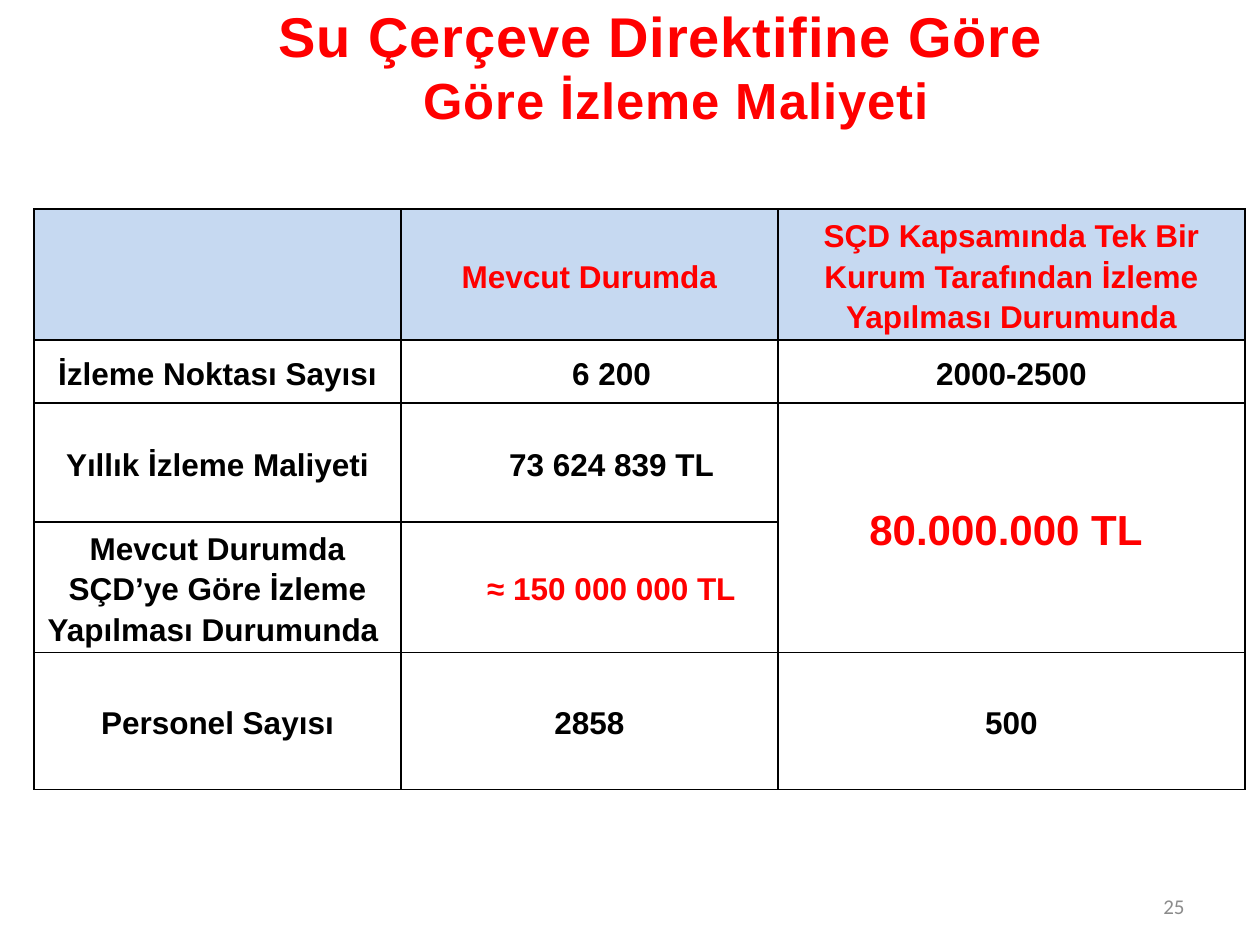
from dataclasses import dataclass
from typing import Any

from lxml import etree
from pptx import Presentation
from pptx import util as u
from pptx.dml.color import RGBColor
from pptx.enum import text
from pptx.oxml import ns

RED, BLACK, WHITE, BLUE, GREY = "FF0000", "000000", "FFFFFF", "C6D9F1", "8C8C8C"
MID = text.PP_ALIGN.CENTER


@dataclass
class Item:
    words: str
    color: str = BLACK
    size: int = 18
    indent: int = 0
    fill: str = WHITE


def px(n: int) -> u.Emu:
    return u.Emu(round(n * 914400 / 126))


def rgb(code: str) -> RGBColor:
    return RGBColor.from_string(code)


def write(para: Any, words: str, *, size: int = 18, color: str = BLACK,
          bold: bool = True, face: str = "Arial", align: Any = MID,
          lines: float = 1.0, indent: int = 0, track: int = 0) -> None:
    para.alignment = align
    para.line_spacing = lines
    if indent:
        props = para._p.get_or_add_pPr()
        props.set("marL", "0")
        props.set("indent", str(px(indent)))
    run = para.add_run()
    run.text = words
    font = run.font
    font.size, font.bold, font.name = u.Pt(size), bold, face
    font.color.rgb = rgb(color)
    if track:
        run._r.get_or_add_rPr().set("spc", str(track))


def add_box(slide: Any, x: int, y: int, w: int, h: int) -> Any:
    frame = slide.shapes.add_textbox(px(x), px(y), px(w), px(h)).text_frame
    frame.word_wrap = True
    frame.vertical_anchor = text.MSO_ANCHOR.MIDDLE
    return frame


def add_edges(cell: Any) -> None:
    props = cell._tc.get_or_add_tcPr()
    for i, side in enumerate(("lnL", "lnR", "lnT", "lnB")):
        line = etree.Element(ns.qn(f"a:{side}"), w=str(u.Pt(1)))
        fill = etree.SubElement(line, ns.qn("a:solidFill"))
        etree.SubElement(fill, ns.qn("a:srgbClr"), val=BLACK)
        props.insert(i, line)


def fill_cell(cell: Any, item: Item) -> None:
    cell.fill.solid()
    cell.fill.fore_color.rgb = rgb(item.fill)
    cell.vertical_anchor = text.MSO_ANCHOR.MIDDLE
    cell.margin_left = cell.margin_right = px(1)
    cell.margin_top = cell.margin_bottom = 0
    add_edges(cell)
    if item.words:
        write(cell.text_frame.paragraphs[0], item.words, size=item.size,
              color=item.color, lines=1.15, indent=item.indent)


def add_grid(slide: Any, x: int, y: int, cols: list[int], rows: list[int],
             items: list[list[Item]]) -> None:
    table = slide.shapes.add_table(len(rows), len(cols), px(x), px(y),
                                   px(sum(cols)), px(sum(rows))).table
    for col, w in zip(table.columns, cols):
        col.width = px(w)
    for row, h in zip(table.rows, rows):
        row.height = px(h)
    for r, line in enumerate(items):
        for c, item in enumerate(line):
            fill_cell(table.cell(r, c), item)
    table.cell(2, 2).merge(table.cell(3, 2))


COLS = [367, 377, 467]
ROWS = [131, 63, 119, 122, 137]
ITEMS = [
    [Item("", fill=BLUE),
     Item("Mevcut Durumda", RED, fill=BLUE),
     Item("SÇD Kapsamında Tek Bir Kurum Tarafından İzleme Yapılması Durumunda",
          RED, fill=BLUE)],
    [Item("İzleme Noktası Sayısı"), Item("6 200", indent=44), Item("2000-2500")],
    [Item("Yıllık İzleme Maliyeti"), Item("73 624 839 TL", indent=44),
     Item("80.000.000 TL ", RED, 24)],
    [Item("Mevcut Durumda SÇD’ye Göre İzleme Yapılması Durumunda "),
     Item("≈ 150 000 000 TL", RED, indent=44), Item("")],
    [Item("Personel Sayısı"), Item("2858"), Item("500")],
]


def main() -> None:
    deck = Presentation()
    deck.slide_width, deck.slide_height = px(1260), px(945)
    slide = deck.slides.add_slide(deck.slide_layouts[6])

    page = add_box(slide, 903, 881, 294, 50)
    write(page.paragraphs[0], "25", size=12, color=GREY, bold=False,
          face="Calibri", align=text.PP_ALIGN.RIGHT)

    add_grid(slide, 34, 209, COLS, ROWS, ITEMS)

    title = add_box(slide, 102, -13, 1134, 158)
    write(title.paragraphs[0], "Su Çerçeve Direktifine Göre ", size=32,
          color=RED, track=50)
    write(title.add_paragraph(), " Göre İzleme Maliyeti", size=29,
          color=RED, track=50)

    deck.save("out.pptx")


if __name__ == "__main__":
    main()
